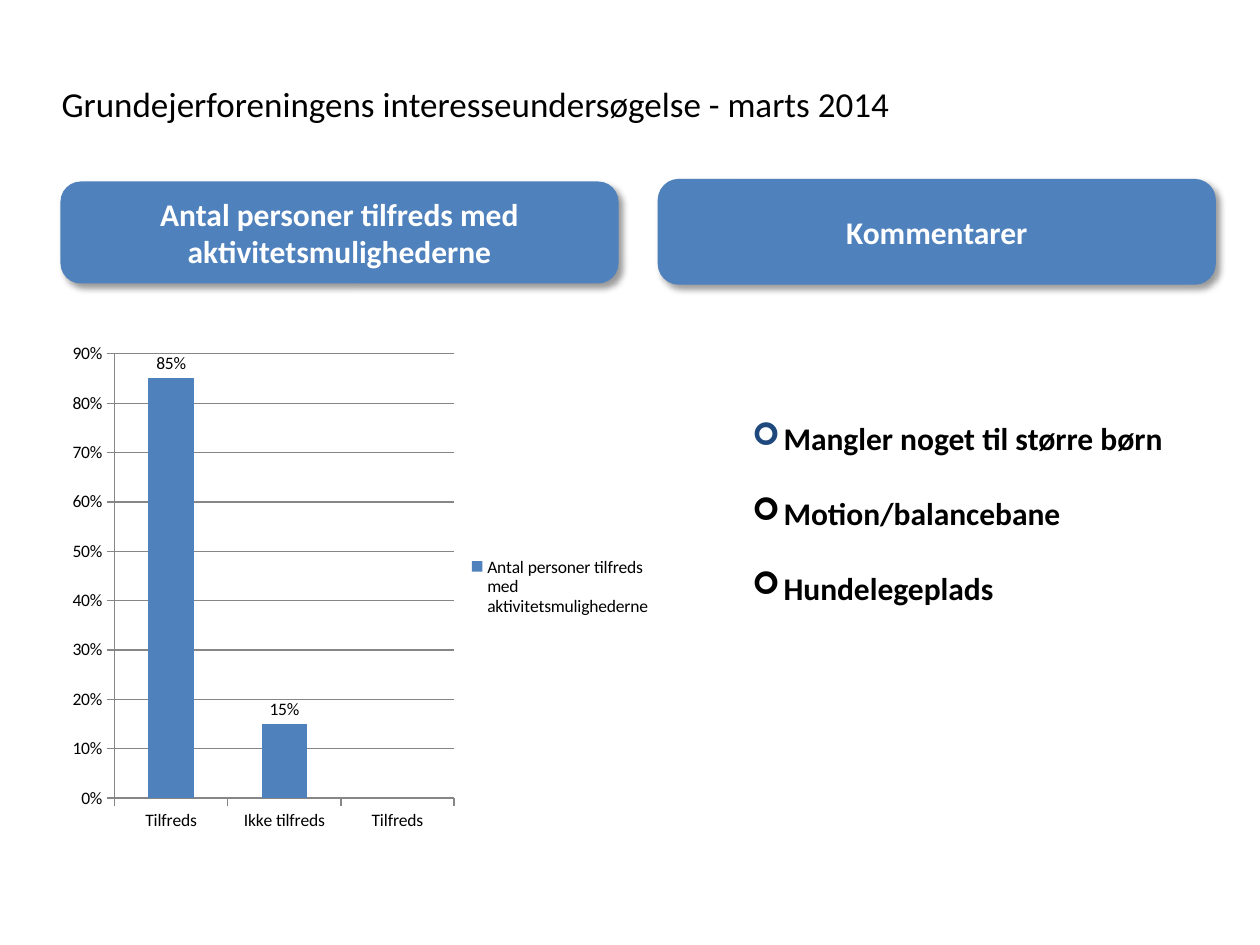
from lxml import etree
from pptx import Presentation
from pptx.chart.data import CategoryChartData
from pptx.dml.color import RGBColor
from pptx.enum.chart import XL_CHART_TYPE, XL_LABEL_POSITION, XL_LEGEND_POSITION, XL_TICK_MARK
from pptx.enum.shapes import MSO_SHAPE
from pptx.enum.text import MSO_ANCHOR, PP_ALIGN
from pptx.oxml import parse_xml
from pptx.oxml.ns import nsdecls, qn
from pptx.util import Inches, Pt

FONT = "Calibri"
BLUE, NAVY, GREY, BLACK, WHITE = "4F81BD", "1F497D", "868686", "000000", "FFFFFF"
SATISFACTION = "Antal personer tilfreds med aktivitetsmulighederne"


def rgb(value):
    return RGBColor.from_string(value)


def style_font(font, size, color=BLACK, bold=False):
    font.name, font.size, font.bold = FONT, Pt(size), bold
    font.color.rgb = rgb(color)


def add_run(p, text, size, color=BLACK, bold=False):
    r = p.add_run()
    r.text = text
    style_font(r.font, size, color, bold)


def add_title(slide, box, text):
    tf = slide.shapes.add_textbox(*map(Inches, box)).text_frame
    tf.word_wrap = True
    tf.vertical_anchor = MSO_ANCHOR.MIDDLE
    add_run(tf.paragraphs[0], text, 20)


def add_shadow(sp):
    sp.shadow.inherit = False
    effects = sp._element.spPr.find(qn("a:effectLst"))
    effects.append(parse_xml(
        f'<a:outerShdw {nsdecls("a")} blurRad="{Pt(4)}" dist="{Pt(3)}" dir="2700000" '
        'algn="tl" rotWithShape="0"><a:srgbClr val="000000"><a:alpha val="40000"/>'
        '</a:srgbClr></a:outerShdw>'))


def add_heading(slide, box, text):
    sp = slide.shapes.add_shape(MSO_SHAPE.ROUNDED_RECTANGLE, *map(Inches, box))
    sp.adjustments[0] = 0.2
    sp.fill.solid()
    sp.fill.fore_color.rgb = rgb(BLUE)
    sp.line.fill.background()
    add_shadow(sp)
    tf = sp.text_frame
    tf.word_wrap = True
    tf.vertical_anchor = MSO_ANCHOR.MIDDLE
    tf.margin_left = tf.margin_right = tf.margin_top = tf.margin_bottom = Inches(0.04)
    p = tf.paragraphs[0]
    p.alignment = PP_ALIGN.CENTER
    add_run(p, text, 18, WHITE, True)


def add_satisfaction_chart(slide, box):
    data = CategoryChartData(number_format="0%")
    data.categories = ["Tilfreds", "Ikke tilfreds", "Tilfreds"]
    data.add_series(SATISFACTION, [0.85, 0.15, None])
    chart = slide.shapes.add_chart(
        XL_CHART_TYPE.COLUMN_CLUSTERED, *map(Inches, box), data).chart
    style_font(chart.font, 10)
    chart.has_title = False
    chart.has_legend = True
    chart.legend.position = XL_LEGEND_POSITION.RIGHT
    chart.legend.include_in_layout = False

    value_axis = chart.value_axis
    value_axis.minimum_scale, value_axis.maximum_scale = 0, 0.9
    value_axis.major_unit = 0.1
    value_axis.tick_labels.number_format = "0%"
    value_axis.tick_labels.number_format_is_linked = False
    value_axis.major_gridlines.format.line.color.rgb = rgb(GREY)
    for axis in (chart.category_axis, value_axis):
        axis.major_tick_mark = XL_TICK_MARK.OUTSIDE
        axis.format.line.color.rgb = rgb(GREY)

    plot = chart.plots[0]
    plot.gap_width = 150
    plot.vary_by_categories = False
    fill = plot.series[0].format.fill
    fill.solid()
    fill.fore_color.rgb = rgb(BLUE)
    plot.has_data_labels = True
    labels = plot.data_labels
    labels.show_value = True
    labels.number_format, labels.number_format_is_linked = "0%", False
    labels.position = XL_LABEL_POSITION.OUTSIDE_END


def add_bullet(p, color):
    pPr = p._p.get_or_add_pPr()
    pPr.set("marL", str(Inches(0.25)))
    pPr.set("indent", str(-Inches(0.25)))
    bu_color = etree.SubElement(pPr, qn("a:buClr"))
    etree.SubElement(bu_color, qn("a:srgbClr"), val=color)
    etree.SubElement(pPr, qn("a:buFont"), typeface="Wingdings")
    etree.SubElement(pPr, qn("a:buChar"), char="➢")


def add_comments(slide, box, comments):
    tf = slide.shapes.add_textbox(*map(Inches, box)).text_frame
    tf.word_wrap = True
    for i, (text, bullet_color) in enumerate(comments):
        p = tf.add_paragraph() if i else tf.paragraphs[0]
        if i:
            p.space_before = Pt(21)
        add_bullet(p, bullet_color)
        add_run(p, text, 18, bold=True)


def main():
    prs = Presentation()
    prs.slide_width, prs.slide_height = Inches(10), Inches(7.5)
    slide = prs.slides.add_slide(prs.slide_layouts[6])
    add_title(slide, (0.39, 0.37, 8.54, 0.9),
              "Grundejerforeningens interesseundersøgelse - marts 2014")
    add_heading(slide, (0.48, 1.44, 4.43, 0.81), SATISFACTION)
    add_satisfaction_chart(slide, (0.48, 2.65, 4.79, 4.02))
    add_comments(slide, (5.87, 3.28, 3.92, 1.92), [
        ("Mangler noget til større børn", NAVY),
        ("Motion/balancebane", BLACK),
        ("Hundelegeplads", BLACK),
    ])
    add_heading(slide, (5.22, 1.42, 4.43, 0.84), "Kommentarer")
    prs.save("out.pptx")


if __name__ == "__main__":
    main()
